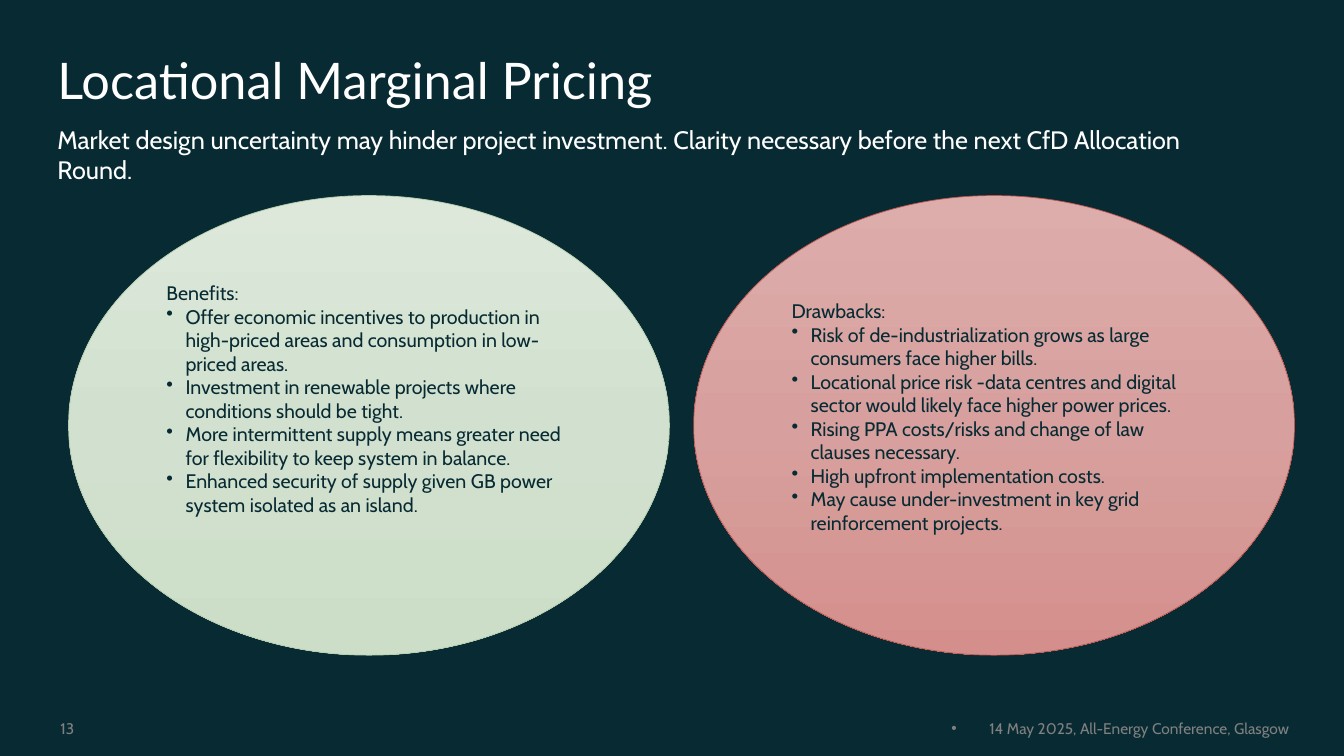
from copy import deepcopy

from lxml import etree
from pptx import Presentation
from pptx.dml.color import RGBColor
from pptx.enum.shapes import MSO_SHAPE
from pptx.enum.text import MSO_ANCHOR, MSO_AUTO_SIZE, PP_ALIGN
from pptx.oxml.ns import qn
from pptx.util import Pt

PX = 9144
OVAL = MSO_SHAPE.OVAL
TOP, MIDDLE, BOTTOM = MSO_ANCHOR.TOP, MSO_ANCHOR.MIDDLE, MSO_ANCHOR.BOTTOM
LEFT, RIGHT = PP_ALIGN.LEFT, PP_ALIGN.RIGHT
NO_FIT = MSO_AUTO_SIZE.NONE

NAVY = RGBColor(0x08, 0x2B, 0x33)
WHITE = RGBColor(0xFF, 0xFF, 0xFF)
GREY = RGBColor(0x80, 0x80, 0x80)
GREENS = (RGBColor(0xDD, 0xE8, 0xDA), RGBColor(0xD2, 0xE1, 0xCF), RGBColor(0xCC, 0xDE, 0xC8))
GREEN_EDGE = RGBColor(0xB3, 0xCD, 0xAE)
REDS = (RGBColor(0xDD, 0xAD, 0xAB), RGBColor(0xD7, 0xA0, 0x9E), RGBColor(0xD4, 0x8F, 0x8C))
RED_EDGE = RGBColor(0xC0, 0x54, 0x4E)

BENEFITS = [
    "Offer economic incentives to production in high-priced areas and consumption in low-priced areas.",
    "Investment in renewable projects where conditions should be tight.",
    "More intermittent supply means greater need for flexibility to keep system in balance.",
    "Enhanced security of supply given GB power system isolated as an island.",
]
DRAWBACKS = [
    "Risk of de-industrialization grows as large consumers face higher bills.",
    "Locational price risk -data centres and digital sector would likely face higher power prices.",
    "Rising PPA costs/risks and change of law clauses necessary.",
    "High upfront implementation costs.",
    "May cause under-investment in key grid reinforcement projects.",
]


class SlideBuilder:
    """Holds the style and the current slide, and adds each kind of element."""

    body_font = "Cabin"
    title_font = "Lato"
    indent = 19

    def __init__(self, slide, background):
        self.slide = slide
        slide.background.fill.solid()
        slide.background.fill.fore_color.rgb = background

    def style(self, paragraph, size, color, font=body_font, align=LEFT):
        paragraph.alignment = align
        paragraph.space_before = Pt(0)
        paragraph.font.name = font
        paragraph.font.size = Pt(size)
        paragraph.font.color.rgb = color

    def bullet(self, paragraph, char=None):
        properties = paragraph._p.get_or_add_pPr()
        indent = self.indent * PX if char else 0
        properties.set("marL", str(indent))
        properties.set("indent", str(-indent))
        if char:
            etree.SubElement(properties, qn("a:buChar")).set("char", char)
        else:
            etree.SubElement(properties, qn("a:buNone"))

    def fill_text(self, frame, text, anchor, size, color, **style):
        frame.auto_size = NO_FIT
        frame.word_wrap = True
        frame.vertical_anchor = anchor
        frame.text = text
        self.style(frame.paragraphs[0], size, color, **style)

    def place(self, placeholder, left, top, width, height):
        placeholder.left, placeholder.top = left * PX, top * PX
        placeholder.width, placeholder.height = width * PX, height * PX
        return placeholder.text_frame

    def title(self, text, *box):
        frame = self.place(self.slide.shapes.title, *box)
        self.fill_text(frame, text, TOP, 36, WHITE, font=self.title_font)
        frame.paragraphs[0].line_spacing = 0.9

    def footer(self, text, *box):
        frame = self.place(self.slide.placeholders[1], *box)
        self.bullet(frame.paragraphs[0])
        self.fill_text(frame, text, BOTTOM, 11, GREY, align=RIGHT)

    def label(self, text, box, anchor, size, color):
        textbox = self.slide.shapes.add_textbox(*(length * PX for length in box))
        self.fill_text(textbox.text_frame, text, anchor, size, color)

    def oval(self, heading, points, box, shades, edge, bottom_inset):
        oval = self.slide.shapes.add_shape(OVAL, *(length * PX for length in box))
        oval.shadow.inherit = False
        oval.line.color.rgb = edge
        oval.line.width = Pt(0.5)
        oval.fill.gradient()
        oval.fill.gradient_angle = 270
        stops = oval._element.spPr.find(qn("a:gradFill")).find(qn("a:gsLst"))
        stops.insert(1, deepcopy(stops[0]))
        for position, (stop, shade) in enumerate(zip(oval.fill.gradient_stops, shades)):
            stop.position = position / 2
            stop.color.rgb = shade
        frame = oval.text_frame
        self.fill_text(frame, heading, MIDDLE, 14, NAVY)
        frame.margin_bottom = bottom_inset * PX
        for point in points:
            paragraph = frame.add_paragraph()
            paragraph.text = point
            self.bullet(paragraph, "•")
            self.style(paragraph, 14, NAVY)


def main():
    deck = Presentation()
    deck.slide_width, deck.slide_height = 1333 * PX, 750 * PX
    page = SlideBuilder(deck.slides.add_slide(deck.slide_layouts[1]), NAVY)
    page.title("Locational Marginal Pricing", 47, 51, 1153, 75)
    page.label(
        "Market design uncertainty may hinder project investment. "
        "Clarity necessary before the next CfD Allocation Round.",
        (47, 118, 1199, 71), TOP, 18, WHITE,
    )
    page.oval("Benefits:", BENEFITS, (68, 194, 596, 456), GREENS, GREEN_EDGE, 58)
    page.oval("Drawbacks:", DRAWBACKS, (688, 194, 596, 456), REDS, RED_EDGE, 22)
    page.label("13", (50, 704, 71, 33), BOTTOM, 11, GREY)
    page.footer("14 May 2025, All-Energy Conference, Glasgow", 534, 704, 755, 33)
    deck.save("out.pptx")


if __name__ == "__main__":
    main()
